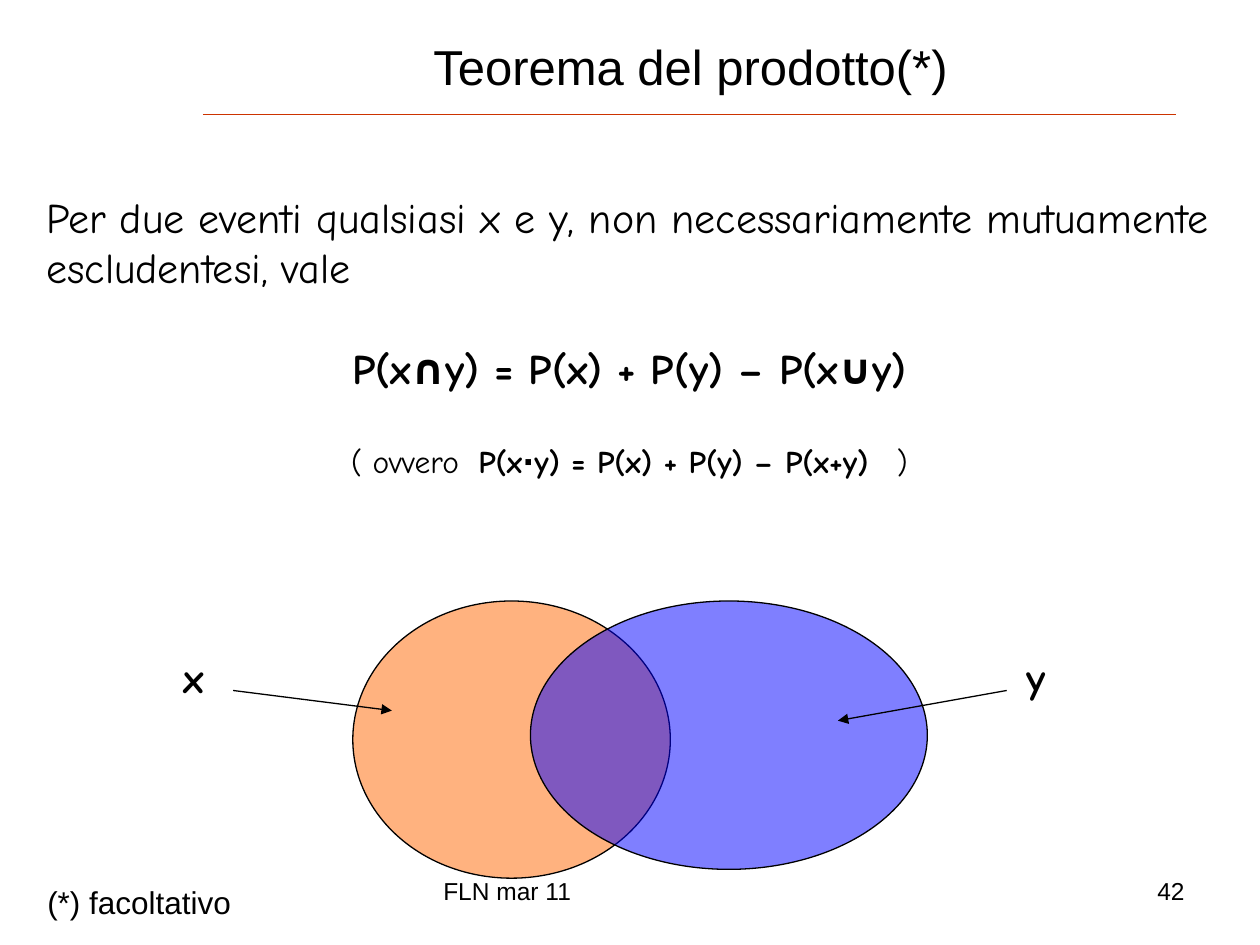
import pptx
import pptx.util
import pptx.dml.color
import pptx.enum.shapes
import pptx.enum.text
import pptx.oxml.ns
import lxml.etree

Inches, Pt = pptx.util.Inches, pptx.util.Pt
ALIGN = pptx.enum.text.PP_ALIGN
ANCHOR = pptx.enum.text.MSO_ANCHOR

THEME = {
    "sans": "Arial", "hand": "Comic Neue",
    "ink": "000000", "rule": "CC3300", "x": "FF6600", "y": "0000FF",
    "title": 28, "body": 24, "note": 18, "footer": 14,
    "line": 0.75, "opacity": 50, "gap": 28.5,
}

# Each run: text, font, size, bold, extra letter spacing in points
TITLE = ("Teorema del prodotto(*)", "sans", "title", False, 0)
FOOTER = ("FLN mar 11", "sans", "footer", False, 0)
PAGE = ("42", "sans", "footer", False, 0)
FOOTNOTE = ("(*) facoltativo", "sans", "note", False, 0)
THEOREM = [
    (ALIGN.LEFT, [("Per due eventi qualsiasi x e y, non necessariamente "
                   "mutuamente escludentesi, vale", "hand", "body", False, 0)]),
    (ALIGN.CENTER, [("P(x∩y) = P(x) + P(y) – P(x∪y)", "hand", "body", True, 0)]),
    (ALIGN.CENTER, [("( ovvero", "hand", "note", False, 0),
                    (" ", "hand", "note", False, 5),
                    ("P(x", "hand", "note", True, 0),
                    ("⋅", "sans", "note", True, 0),
                    ("y) = P(x) + P(y) – P(x+y)", "hand", "note", True, 0),
                    (" ", "hand", "note", False, 10),
                    (")", "hand", "note", False, 0)]),
]

# Each event: name, ellipse box, label box, arrow start, arrow tip
EVENTS = [
    ("x", (2.8, 4.77, 2.52, 2.2), (1.36, 5.12, 0.4, 0.5), (1.85, 5.48), (3.11, 5.64)),
    ("y", (4.21, 4.77, 3.15, 2.13), (8.05, 5.12, 0.39, 0.5), (7.99, 5.48), (6.65, 5.72)),
]


def color(key):
    return pptx.dml.color.RGBColor.from_string(THEME[key])


def add_child(parent, tag, **attributes):
    child = lxml.etree.SubElement(parent, pptx.oxml.ns.qn(tag))
    for key, value in attributes.items():
        child.set(key, value)
    return child


def add_text(slide, box, paragraphs, anchor=ANCHOR.TOP, wrap=True):
    frame = slide.shapes.add_textbox(*map(Inches, box)).text_frame
    frame.word_wrap = wrap
    frame.vertical_anchor = anchor
    for index, (align, runs) in enumerate(paragraphs):
        paragraph = frame.add_paragraph() if index else frame.paragraphs[0]
        paragraph.alignment = align
        if index:
            paragraph.space_before = Pt(THEME["gap"])
        for text, face, size, bold, spacing in runs:
            run = paragraph.add_run()
            run.text = text
            run.font.name = THEME[face]
            run.font.size = Pt(THEME[size])
            run.font.bold = bold
            run.font.color.rgb = color("ink")
            if spacing:
                run.font._element.set("spc", str(spacing * 100))


def add_line(slide, start, end, key, arrow=False):
    line = slide.shapes.add_connector(
        pptx.enum.shapes.MSO_CONNECTOR.STRAIGHT, *map(Inches, start + end))
    line.line.color.rgb = color(key)
    line.line.width = Pt(THEME["line"])
    if arrow:
        add_child(line.line._get_or_add_ln(), "a:tailEnd", type="triangle")
    add_child(line._element.spPr, "a:effectLst")


def add_event_area(slide, name, box):
    area = slide.shapes.add_shape(
        pptx.enum.shapes.MSO_SHAPE.OVAL, *map(Inches, box))
    area.shadow.inherit = False
    area.fill.solid()
    area.fill.fore_color.rgb = color(name)
    tint = area._element.spPr.find(".//" + pptx.oxml.ns.qn("a:srgbClr"))
    add_child(tint, "a:alpha", val=str(THEME["opacity"] * 1000))
    area.line.color.rgb = color("ink")
    area.line.width = Pt(THEME["line"])


def main():
    deck = pptx.Presentation()
    deck.slide_width, deck.slide_height = Inches(10), Inches(7.5)
    slide = deck.slides.add_slide(deck.slide_layouts[6])

    add_line(slide, (1.61, 0.91), (9.33, 0.91), "rule")
    add_text(slide, (3.42, 6.9, 3.17, 0.45), [(ALIGN.LEFT, [FOOTER])])
    add_text(slide, (7.17, 6.9, 2.33, 0.45), [(ALIGN.RIGHT, [PAGE])])
    add_text(slide, (1.53, 0.21, 7.9, 0.63), [(ALIGN.CENTER, [TITLE])], ANCHOR.MIDDLE)
    add_text(slide, (0.27, 1.47, 9.45, 2.8), THEOREM)

    for name, area, _, _, _ in EVENTS:
        add_event_area(slide, name, area)
    for name, _, label, start, tip in EVENTS:
        add_text(slide, label, [(ALIGN.LEFT, [(name, "hand", "body", True, 0)])], wrap=False)
        add_line(slide, start, tip, "ink", arrow=True)

    add_text(slide, (0.27, 6.96, 1.67, 0.4), [(ALIGN.CENTER, [FOOTNOTE])], wrap=False)
    deck.save("out.pptx")


if __name__ == "__main__":
    main()
